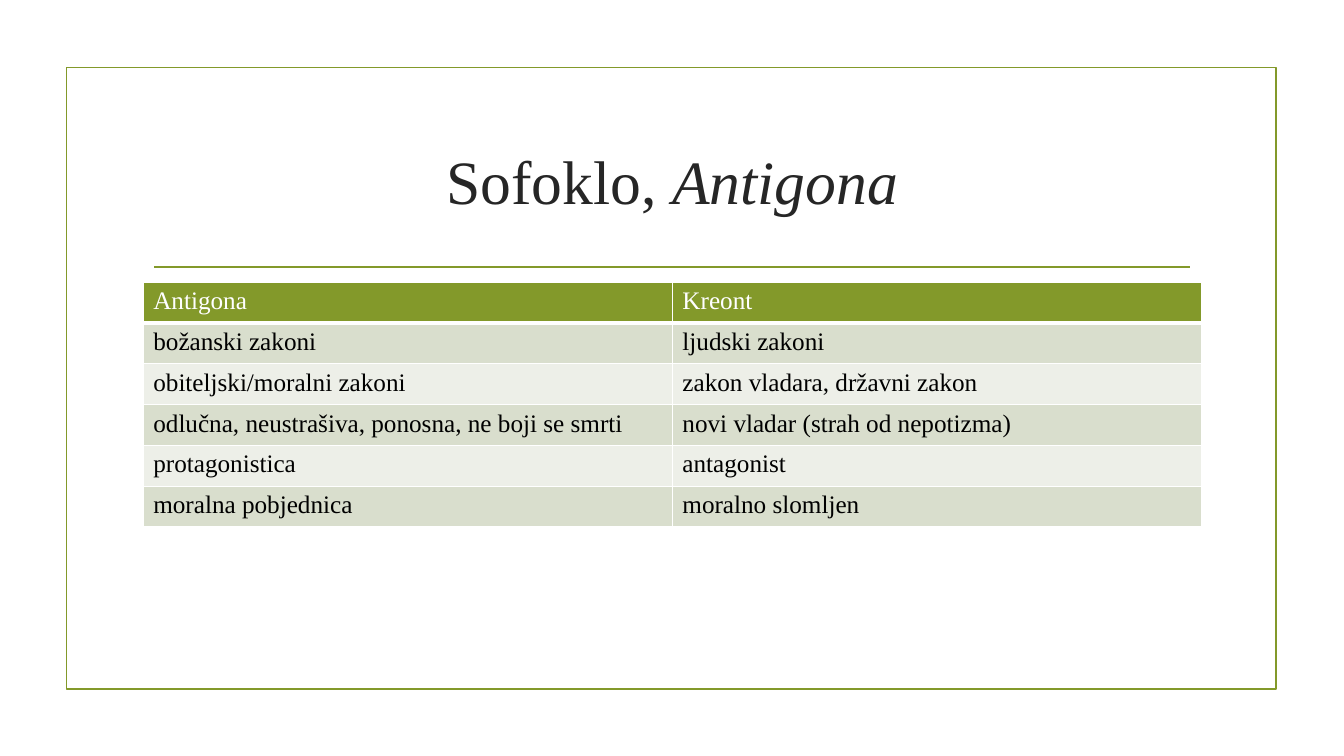
"""Build a slide that compares Antigone and Creon."""
from lxml import etree
from pptx import Presentation
from pptx.dml.color import RGBColor
from pptx.enum.shapes import MSO_CONNECTOR, MSO_SHAPE
from pptx.enum.text import MSO_ANCHOR, MSO_AUTO_SIZE, PP_ALIGN
from pptx.oxml.ns import qn
from pptx.util import Cm, Pt

RECT = MSO_SHAPE.RECTANGLE
STRAIGHT = MSO_CONNECTOR.STRAIGHT
MIDDLE = MSO_ANCHOR.MIDDLE
CENTER = PP_ALIGN.CENTER
NO_FIT = MSO_AUTO_SIZE.NONE

ROWS = [
    ("Antigona", "Kreont"),
    ("božanski zakoni", "ljudski zakoni"),
    ("obiteljski/moralni zakoni", "zakon vladara, državni zakon"),
    ("odlučna, neustrašiva, ponosna, ne boji se smrti",
     "novi vladar (strah od nepotizma)"),
    ("protagonistica", "antagonist"),
    ("moralna pobjednica", "moralno slomljen"),
]


def color(code):
    return RGBColor.from_string(code)


class Page:
    """Hold the style and the current slide."""

    font = "Times New Roman"
    green = "83992A"
    white = "FFFFFF"
    black = "000000"
    dark = "262626"
    bands = ("EDEFE8", "D9DECD")

    def __init__(self, slide):
        self.slide = slide

    def stroke(self, line):
        line.color.rgb = color(self.green)
        line.width = Pt(1.25)

    def style(self, run, size, code):
        run.font.name = self.font
        run.font.size = Pt(size)
        run.font.bold = False
        run.font.color.rgb = color(code)

    def frame(self, *box):
        shape = self.slide.shapes.add_shape(RECT, *map(Cm, box))
        shape.shadow.inherit = False
        shape.fill.background()
        self.stroke(shape.line)

    def rule(self, left, right, top):
        line = self.slide.shapes.add_connector(
            STRAIGHT, Cm(left), Cm(top), Cm(right), Cm(top))
        self.stroke(line.line)
        etree.SubElement(line._element.spPr, qn("a:effectLst"))

    def title(self, plain, slanted, *box):
        shape = self.slide.shapes.title
        shape.left, shape.top, shape.width, shape.height = map(Cm, box)
        text = shape.text_frame
        text.word_wrap = True
        text.auto_size = NO_FIT
        text.vertical_anchor = MIDDLE
        para = text.paragraphs[0]
        para.alignment = CENTER
        for words, italic in ((plain, False), (slanted, True)):
            run = para.add_run()
            run.text = words
            self.style(run, 44, self.dark)
            run.font.italic = italic

    def border(self, cell, head):
        props = cell._tc.get_or_add_tcPr()
        for spot, side in enumerate("LRTB"):
            width = 3 if head and side == "B" else 1
            edge = etree.Element(qn(f"a:ln{side}"), w=str(Pt(width)))
            fill = etree.SubElement(edge, qn("a:solidFill"))
            etree.SubElement(fill, qn("a:srgbClr"), val=self.white)
            props.insert(spot, edge)

    def table(self, rows, *box):
        grid = self.slide.shapes.add_table(
            len(rows), len(rows[0]), *map(Cm, box)).table
        for r, row in enumerate(rows):
            head = r == 0
            for c, words in enumerate(row):
                cell = grid.cell(r, c)
                cell.text_frame.text = words
                run = cell.text_frame.paragraphs[0].runs[0]
                self.style(run, 18, self.white if head else self.black)
                cell.fill.solid()
                shade = self.green if head else self.bands[r % 2]
                cell.fill.fore_color.rgb = color(shade)
                self.border(cell, head)


def main():
    deck = Presentation()
    deck.slide_width, deck.slide_height = Cm(33.87), Cm(19.05)
    page = Page(deck.slides.add_slide(deck.slide_layouts[5]))
    left, width = 3.61, 26.67
    page.frame(1.68, 1.7, 30.48, 15.67)
    page.rule(3.89, 30, 6.73)
    page.title("Sofoklo, ", "Antigona", left, 2.72, width, 3.63)
    page.table(ROWS, left, 7.11, width, 6.17)
    deck.save("out.pptx")


if __name__ == "__main__":
    main()
